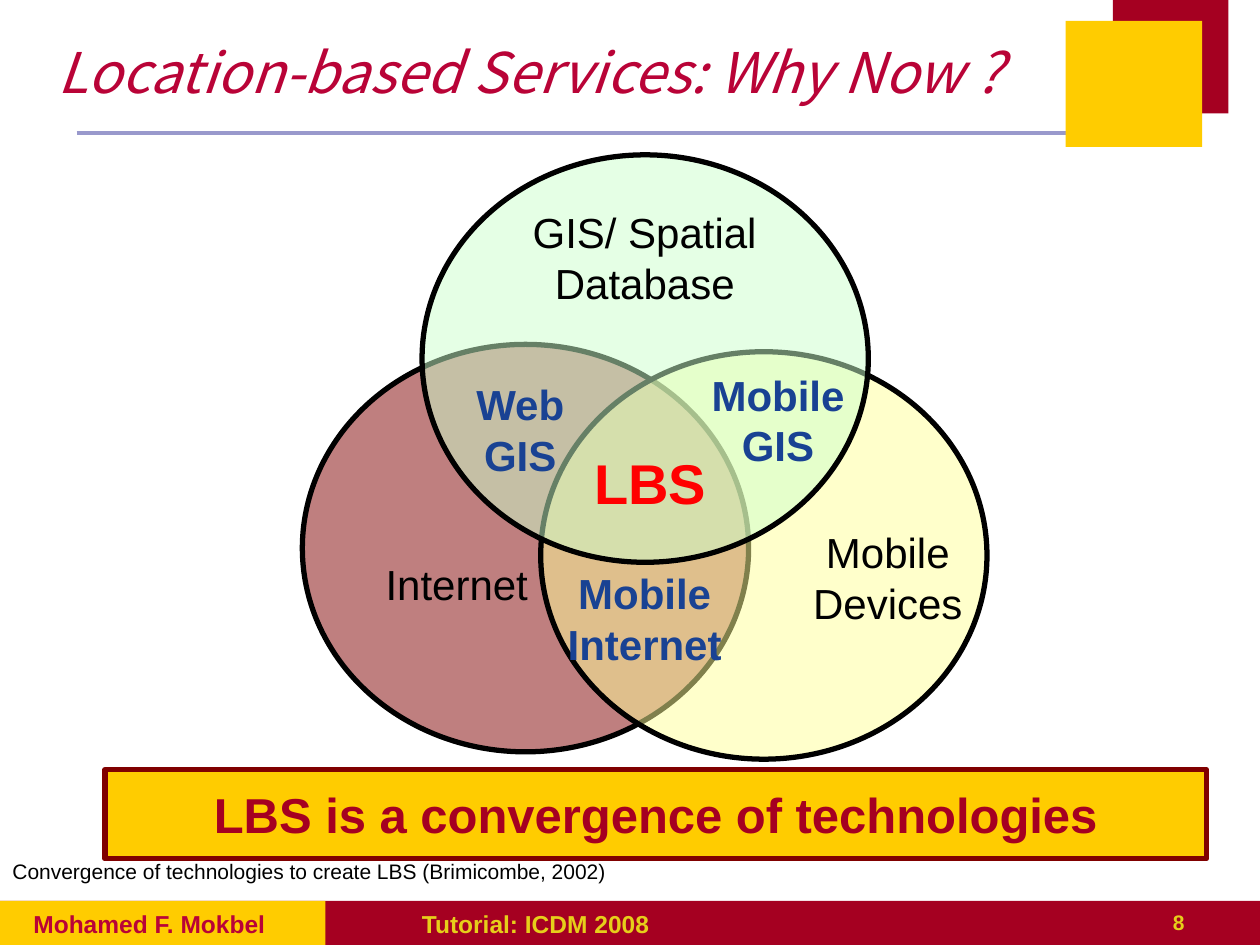
from lxml.etree import SubElement
from pptx import Presentation
from pptx.dml.color import RGBColor
from pptx.enum.shapes import MSO_CONNECTOR, MSO_SHAPE
from pptx.enum.text import MSO_ANCHOR, PP_ALIGN
from pptx.oxml.ns import qn
from pptx.util import Inches, Pt

COLUMNS, ROWS = 120, 90
WIDTH, HEIGHT = Inches(10), Inches(7.5)
CIRCLE_SIZE = (42.5, 38.8)

COLORS = {
    "rule": "9999CC",
    "crimson": "A50021",
    "gold": "FFCC00",
    "footer": "E6CE1A",
    "title": "B90337",
    "maroon": "800000",
    "yellow": "FFFF99",
    "green": "CCFFCC",
    "overlap": "194293",
    "core": "FF0000",
    "black": "000000",
}

TECHNOLOGIES = [
    ("Internet", (28.8, 32.8), "maroon", (30.75, 52.6, 25.5, 6)),
    ("Mobile Devices", (51.5, 33.5), "yellow", (72.25, 49.6, 24.6, 10.8)),
    ("GIS/ Spatial Database", (40.2, 14.75), "green", (43, 19.1, 36.8, 10.8)),
]

OVERLAPS = [
    ("Web GIS", (42, 35.5, 15.1, 10.8), 24, "overlap"),
    ("LBS", (54.4, 42.1, 15.1, 7.6), 32, "core"),
    ("Mobile Internet", (52.4, 53.5, 18, 10.8), 24, "overlap"),
    ("Mobile GIS", (65.6, 34.6, 17, 10.8), 24, "overlap"),
]


def rgb(name):
    """Return the named colour."""
    return RGBColor.from_string(COLORS[name])


def place(left, top, width, height):
    """Convert grid columns and rows to slide lengths."""
    across, down = WIDTH / COLUMNS, HEIGHT / ROWS
    return (round(left * across), round(top * down),
            round(width * across), round(height * down))


def write(holder, text, size, color, bold=False, italic=False,
          align=PP_ALIGN.LEFT, anchor=MSO_ANCHOR.TOP, font="Arial"):
    """Write one styled paragraph into a shape."""
    frame = holder.text_frame
    frame.word_wrap = True
    frame.vertical_anchor = anchor
    paragraph = frame.paragraphs[0]
    paragraph.text = text
    paragraph.alignment = align
    paragraph.font.name = font
    paragraph.font.size = Pt(size)
    paragraph.font.bold = bold
    paragraph.font.italic = italic
    paragraph.font.color.rgb = rgb(color)


def add_label(slide, text, area, size, color, **style):
    """Add a text box on the grid."""
    write(slide.shapes.add_textbox(*place(*area)), text, size, color, **style)


def add_block(slide, area, fill, outline=None, kind=MSO_SHAPE.RECTANGLE):
    """Add a filled shape, outlined on request."""
    block = slide.shapes.add_shape(kind, *place(*area))
    block.shadow.inherit = False
    block.fill.solid()
    block.fill.fore_color.rgb = rgb(fill)
    if outline:
        block.line.color.rgb = rgb(outline)
        block.line.width = Pt(3)
    else:
        block.line.fill.background()
    return block


def add_technology(slide, name, corner, fill, label_area):
    """Add a half-transparent Venn circle and its name."""
    circle = add_block(slide, corner + CIRCLE_SIZE, fill, "black", MSO_SHAPE.OVAL)
    tint = circle.fill._xPr.find(qn("a:solidFill"))[0]
    SubElement(tint, qn("a:alpha"), val="50000")
    add_label(slide, name, label_area, 24, "black", align=PP_ALIGN.CENTER)


def add_rule(slide, left, right, row):
    """Add the horizontal rule below the title."""
    x, y, length, _ = place(left, row, right - left, 0)
    rule = slide.shapes.add_connector(MSO_CONNECTOR.STRAIGHT, x, y, x + length, y)
    rule.line.color.rgb = rgb("rule")
    rule.line.width = Pt(2.25)
    SubElement(rule._element.spPr, qn("a:effectLst"))


def add_frame(slide):
    """Add the rule, corner squares and footer."""
    add_rule(slide, 7.3, 102.3, 12.7)
    add_block(slide, (0, 85.8, COLUMNS, 4.2), "crimson")
    add_block(slide, (0, 85.8, 31, 4.2), "gold")
    add_block(slide, (106, 0, 11, 10.8), "crimson")
    add_block(slide, (101.5, 2, 13, 12), "gold")
    add_label(slide, "8", (89, 86, 25, 4), 12, "footer", bold=True,
              align=PP_ALIGN.RIGHT)
    add_label(slide, "Tutorial: ICDM 2008", (39, 86, 56, 4), 14, "footer", bold=True)
    author = add_block(slide, (2, 86, 28, 3), "gold")
    write(author, "Mohamed F. Mokbel", 14, "title", bold=True)


def main():
    """Build the slide and save it."""
    deck = Presentation()
    deck.slide_width, deck.slide_height = WIDTH, HEIGHT
    slide = deck.slides.add_slide(deck.slide_layouts[6])

    add_frame(slide)
    add_label(slide, "Location-based Services: Why Now ?", (4.3, 0.7, 99, 12.1),
              32, "title", italic=True, anchor=MSO_ANCHOR.MIDDLE,
              font="Noto Sans CJK KR")
    for technology in TECHNOLOGIES:
        add_technology(slide, *technology)
    for overlap in OVERLAPS:
        add_label(slide, *overlap, bold=True, align=PP_ALIGN.CENTER)

    add_label(slide, "Convergence of technologies to create LBS (Brimicombe, 2002)",
              (0, 81.2, 81.2, 3.6), 12, "black")
    conclusion = add_block(slide, (10, 73.3, 104.9, 8.5), "gold", "maroon")
    write(conclusion, "LBS is a convergence of technologies", 28, "crimson",
          bold=True, align=PP_ALIGN.CENTER, anchor=MSO_ANCHOR.MIDDLE)

    deck.save("out.pptx")


if __name__ == "__main__":
    main()
